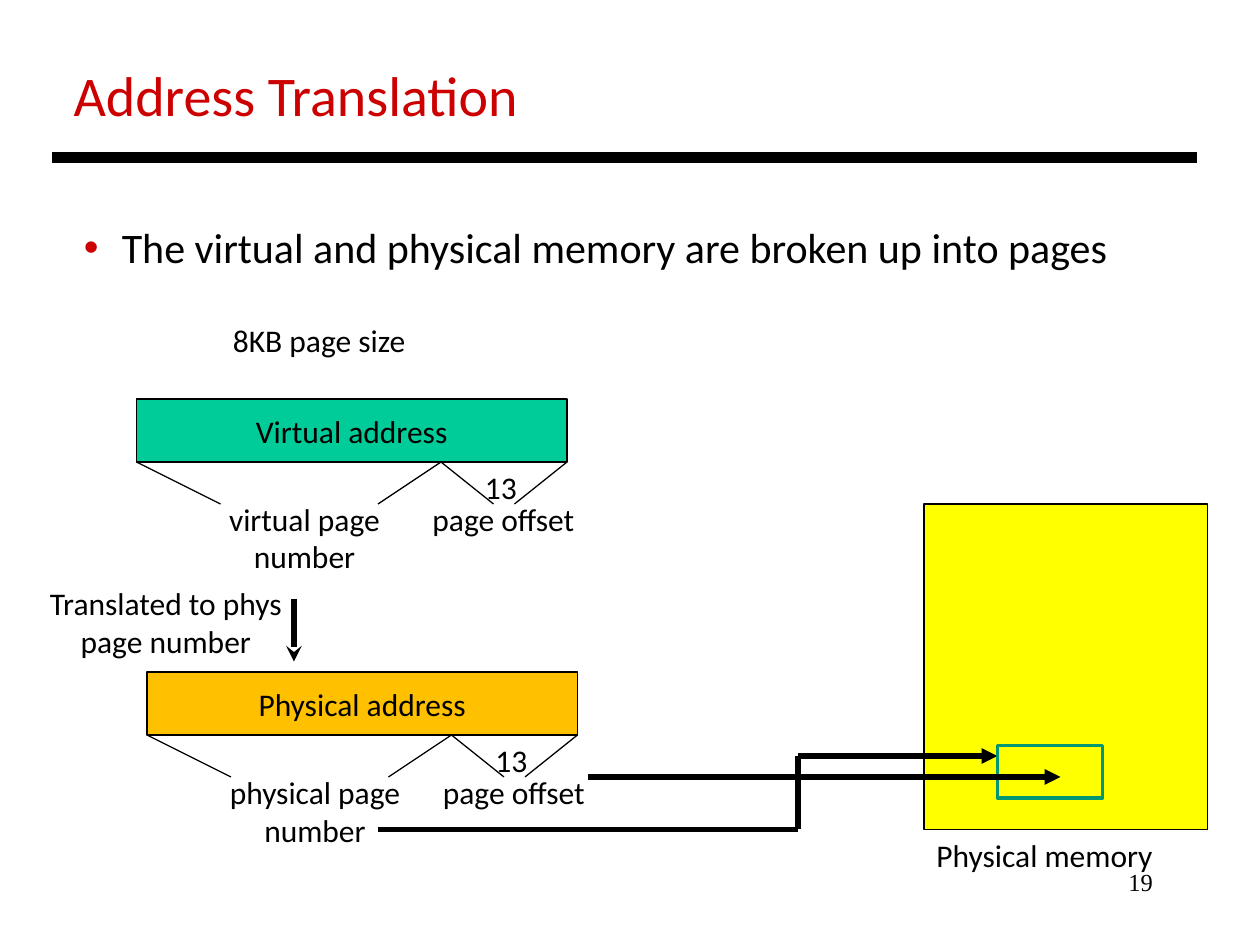
from lxml.etree import SubElement
from pptx import Presentation
from pptx.dml.color import RGBColor
from pptx.enum.shapes import MSO_CONNECTOR, MSO_SHAPE
from pptx.enum.text import MSO_ANCHOR, MSO_AUTO_SIZE, PP_ALIGN
from pptx.oxml.ns import qn
from pptx.util import Pt

PX = 7620  # EMU per px: 120 px to the inch
BLACK = RGBColor(0x00, 0x00, 0x00)
RED = RGBColor(0xCC, 0x00, 0x00)
GREEN = RGBColor(0x00, 0xCC, 0x99)
ORANGE = RGBColor(0xFF, 0xC0, 0x00)
YELLOW = RGBColor(0xFF, 0xFF, 0x00)
TEAL = RGBColor(0x00, 0x97, 0x71)

prs = Presentation()
prs.slide_width, prs.slide_height = 1200 * PX, 900 * PX
slide = prs.slides.add_slide(prs.slide_layouts[1])
shapes = slide.shapes


def write(shape, text, size=18, color=BLACK, font="Calibri", align=PP_ALIGN.LEFT,
          anchor=MSO_ANCHOR.TOP, wrap=False):
    frame = shape.text_frame
    frame.text = text
    frame_format = {"word_wrap": wrap, "vertical_anchor": anchor,
                    "auto_size": MSO_AUTO_SIZE.NONE}
    for name, value in frame_format.items():
        setattr(frame, name, value)
    for paragraph in frame.paragraphs:
        paragraph.alignment = align
        paragraph.space_before = Pt(0)
        for run in paragraph.runs:
            run.font.color.rgb = color
            for name, value in {"size": Pt(size), "name": font}.items():
                setattr(run.font, name, value)


def add_line(x1, y1, x2, y2, width=0.75, arrow=None):
    line = shapes.add_connector(MSO_CONNECTOR.STRAIGHT, x1 * PX, y1 * PX, x2 * PX, y2 * PX)
    line.line.color.rgb = BLACK
    line.line.width = Pt(width)
    if arrow:
        SubElement(line.line._get_or_add_ln(), qn("a:tailEnd"), type=arrow)
    SubElement(line._element.spPr, qn("a:effectLst"))


# Title, rule and bullet
title, body = shapes.title, slide.placeholders[1]
for placeholder, box in ((title, (58, 52, 1000, 77)), (body, (68, 205, 1040, 60))):
    placeholder.left, placeholder.top, placeholder.width, placeholder.height = (
        length * PX for length in box)
write(title, "Address Translation", 32, RED, wrap=True)
add_line(50, 150, 1140, 150, 6)

write(body, "The virtual and physical memory are broken up into pages", 24, wrap=True)
bullet = body.text_frame.paragraphs[0]._p.get_or_add_pPr()
bullet.set("marL", str(36 * PX))
bullet.set("indent", str(-36 * PX))
bullet_color = SubElement(bullet, qn("a:buClr"))
SubElement(bullet_color, qn("a:srgbClr"), val=str(RED))
SubElement(bullet, qn("a:buChar"), char="•")

# Boxes: left, top, width, height, fill, outline, outline width, text
virtual = (130, 380, 410, 60, GREEN, BLACK, 0.75, "Virtual address")
physical = (140, 640, 410, 60, ORANGE, BLACK, 0.75, "Physical address")
memory = (880, 480, 270, 310, YELLOW, BLACK, 0.75, "")
page = (950, 710, 100, 50, YELLOW, TEAL, 2, "")
elbow = ((360, 790, 760, 790, 3), (760, 720, 760, 790, 3),
         (760, 720, 950, 720, 3, "triangle"))

for left, top, width, height, fill, outline, weight, text in (virtual, physical, memory, page):
    if top == page[1]:
        for segment in elbow:  # runs over the memory and under the page
            add_line(*segment)
    box = shapes.add_shape(MSO_SHAPE.RECTANGLE, left * PX, top * PX, width * PX, height * PX)
    box.shadow.inherit = False
    box.fill.solid()
    box.fill.fore_color.rgb = fill
    box.line.color.rgb = outline
    box.line.width = Pt(weight)
    if text:
        write(box, text, align=PP_ALIGN.CENTER, anchor=MSO_ANCHOR.MIDDLE)

# Other labels: left, top, width, height, text, alignment
labels = [
    (210, 300, 191, 48, "8KB page size", PP_ALIGN.LEFT),
    (31, 550, 254, 85, "Translated to phys\npage number", PP_ALIGN.CENTER),
    (880, 790, 232, 48, "Physical memory", PP_ALIGN.LEFT),
]

# Each address splits into a page number and a 13-bit offset
for address, kind in ((virtual, "virtual"), (physical, "physical")):
    left, bottom = address[0], address[1] + address[3]
    for start, end in ((0, 80), (290, 230), (290, 340), (410, 360)):
        add_line(left + start, bottom, left + end, bottom + 40)
    labels += [
        (left + 65, bottom + 30, 190, 85, f"{kind} page\nnumber", PP_ALIGN.CENTER),
        (left + 270, bottom + 30, 162, 48, "page offset", PP_ALIGN.LEFT),
        (left + 320, bottom, 55, 48, "13", PP_ALIGN.LEFT),
    ]

for left, top, width, height, text, align in labels:
    label = shapes.add_textbox(left * PX, top * PX, width * PX, height * PX)
    write(label, text, align=align)

add_line(280, 570, 280, 630, 3, "stealth")
add_line(560, 740, 1010, 740, 3, "triangle")

slide_number = shapes.add_textbox(860 * PX, 820 * PX, 250 * PX, 60 * PX)
write(slide_number, "19", 14, font="Times New Roman", align=PP_ALIGN.RIGHT, wrap=True)

prs.save("out.pptx")
